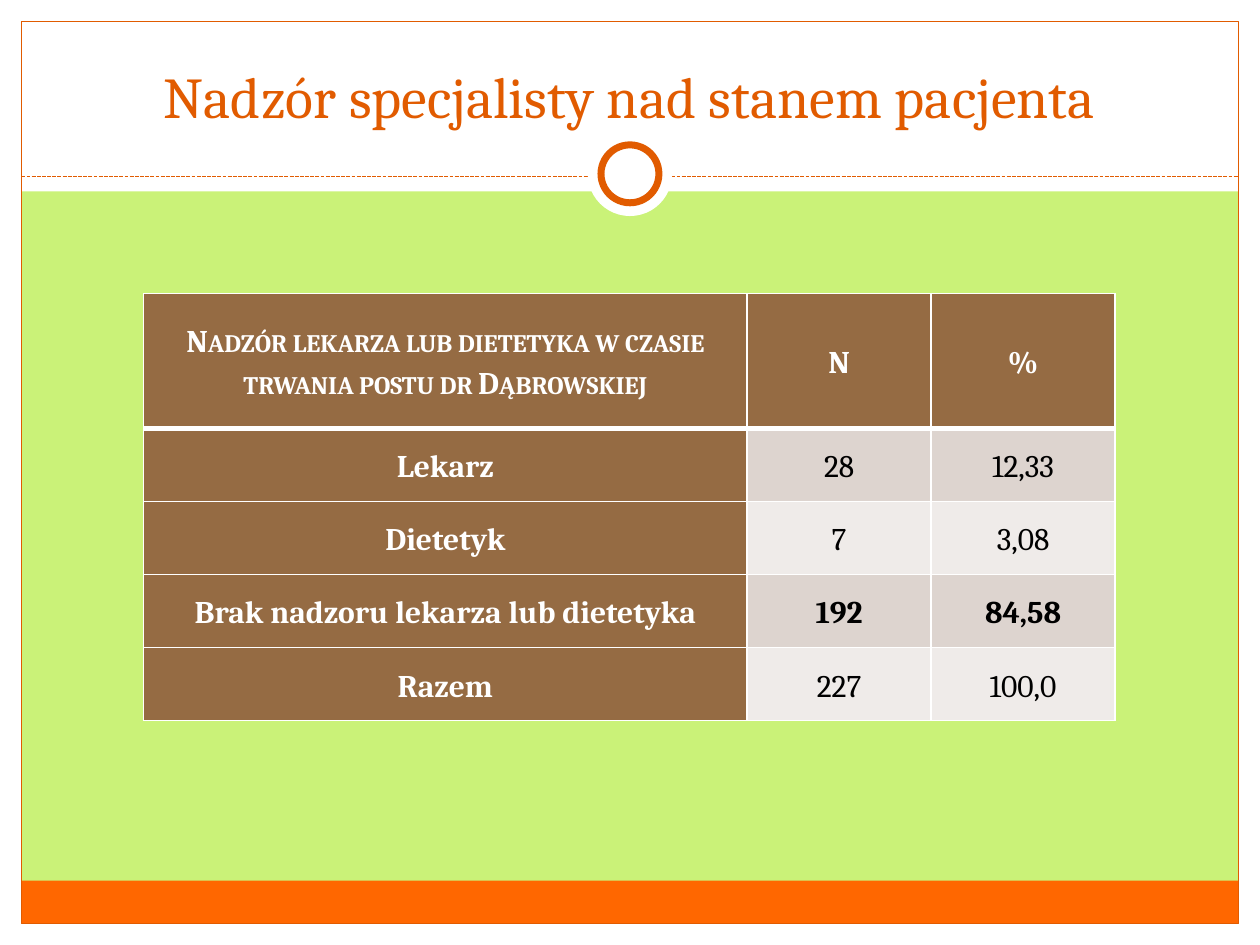
"""Build a slide with a table on specialist supervision of patients."""
from lxml import etree
from pptx import Presentation
from pptx.dml.color import RGBColor
from pptx.enum.dml import MSO_LINE
from pptx.enum.shapes import MSO_CONNECTOR, MSO_SHAPE
from pptx.enum.text import MSO_ANCHOR, PP_ALIGN
from pptx.oxml.ns import qn
from pptx.util import Inches, Pt

TITLE = "Nadzór specjalisty nad stanem pacjenta"
HEADER = ("Nadzór lekarza lub dietetyka w czasie trwania postu dr Dąbrowskiej", "N", "%")
ANSWERS = [
    ("Lekarz", "28", "12,33"),
    ("Dietetyk", "7", "3,08"),
    ("Brak nadzoru lekarza lub dietetyka", "192", "84,58"),
    ("Razem", "227", "100,0"),
]
BOLD_ROW = 3
FONT = "Cambria"

WHITE = RGBColor(0xFF, 0xFF, 0xFF)
BLACK = RGBColor(0, 0, 0)
GREEN = RGBColor(0xCA, 0xF2, 0x78)
ORANGE = RGBColor(0xFF, 0x67, 0x00)
RUST = RGBColor(0xE1, 0x5B, 0x00)
BROWN = RGBColor(0x95, 0x6B, 0x43)
BANDS = (RGBColor(0xEF, 0xEB, 0xE9), RGBColor(0xDD, 0xD4, 0xCF))

RECT, OVAL = MSO_SHAPE.RECTANGLE, MSO_SHAPE.OVAL
STRAIGHT, DASH = MSO_CONNECTOR.STRAIGHT, MSO_LINE.SQUARE_DOT
CENTER, MIDDLE, BOTTOM = PP_ALIGN.CENTER, MSO_ANCHOR.MIDDLE, MSO_ANCHOR.BOTTOM

WIDTH, HEIGHT = 10, 7.5
MARGIN = 0.17
INNER_W, INNER_H = WIDTH - 2 * MARGIN, HEIGHT - 2 * MARGIN
HEADER_H, FOOTER_H = 1.52, 0.34
RULE_Y, BADGE_Y = 1.4, 1.38
TABLE_LEFT, TABLE_TOP = 1.14, 2.33
COLUMNS = (4.79, 1.46, 1.46)
ROWS = (1.07,) + (0.58,) * len(ANSWERS)


def add_figure(slide, kind, box, fill=None, line=None, weight=0.75):
    figure = slide.shapes.add_shape(kind, *map(Inches, box))
    figure.shadow.inherit = False
    if fill is None:
        figure.fill.background()
    else:
        figure.fill.solid()
        figure.fill.fore_color.rgb = fill
    if line is None:
        figure.line.fill.background()
    else:
        figure.line.color.rgb = line
        figure.line.width = Pt(weight)


def centred_square(side):
    return (WIDTH - side) / 2, BADGE_Y - side / 2, side, side


def add_frame(slide):
    for box in (
        (0, HEIGHT - MARGIN, WIDTH, MARGIN),
        (0, 0, WIDTH, HEADER_H),
        (0, 0, MARGIN, HEIGHT),
        (WIDTH - MARGIN, 0, MARGIN, HEIGHT),
    ):
        add_figure(slide, RECT, box, WHITE)
    footer_top = HEIGHT - MARGIN - FOOTER_H
    add_figure(slide, RECT, (MARGIN, footer_top, INNER_W, FOOTER_H), ORANGE)
    add_figure(slide, RECT, (MARGIN, MARGIN, INNER_W, INNER_H), line=RUST)
    ends = (MARGIN, RULE_Y, WIDTH - MARGIN, RULE_Y)
    rule = slide.shapes.add_connector(STRAIGHT, *map(Inches, ends))
    rule.line.color.rgb = RUST
    rule.line.width = Pt(0.75)
    rule.line.dash_style = DASH
    etree.SubElement(rule._element.spPr, qn("a:effectLst"))
    add_figure(slide, OVAL, centred_square(0.67), WHITE)
    add_figure(slide, OVAL, centred_square(0.46), WHITE, RUST, 4)


def add_title(slide):
    title = slide.shapes.title
    title.left, title.top, title.width, title.height = map(Inches, (0.33, 0.25, 9.33, 0.83))
    title.text_frame.text = TITLE
    title.text_frame.vertical_anchor = BOTTOM
    style_paragraph(title.text_frame.paragraphs[0], 33, RUST)
    slide.shapes._spTree.append(title._element)


def style_paragraph(paragraph, size, color, bold=False):
    paragraph.alignment = CENTER
    font = paragraph.font
    font.name, font.size, font.bold = FONT, Pt(size), bold
    font.color.rgb = color


def add_borders(cell, bottom_weight, top_weight):
    weights = {"lnL": 1, "lnR": 1, "lnT": top_weight, "lnB": bottom_weight}
    for side, weight in weights.items():
        border = etree.SubElement(cell._tc.get_or_add_tcPr(), qn(f"a:{side}"), w=str(Pt(weight)))
        fill = etree.SubElement(border, qn("a:solidFill"))
        etree.SubElement(fill, qn("a:srgbClr"), val=str(WHITE))


def add_answers(slide):
    box = (TABLE_LEFT, TABLE_TOP, sum(COLUMNS), sum(ROWS))
    table = slide.shapes.add_table(len(ROWS), len(COLUMNS), *map(Inches, box)).table
    for column, width in zip(table.columns, COLUMNS):
        column.width = Inches(width)
    for row, height in zip(table.rows, ROWS):
        row.height = Inches(height)
    for r, values in enumerate([HEADER] + ANSWERS):
        for c, value in enumerate(values):
            cell = table.cell(r, c)
            heading = r == 0 or c == 0
            cell.text = value
            cell.vertical_anchor = MIDDLE
            cell.margin_left = cell.margin_right = Inches(0.07)
            cell.margin_top = cell.margin_bottom = 0
            add_borders(cell, 3 if r == 0 else 1, 3 if r == 1 else 1)
            cell.fill.solid()
            cell.fill.fore_color.rgb = BROWN if heading else BANDS[r % 2]
            paragraph = cell.text_frame.paragraphs[0]
            paragraph.line_spacing = 1.15
            style_paragraph(paragraph, 18, WHITE if heading else BLACK, heading or r == BOLD_ROW)
    question = table.cell(0, 0).text_frame.paragraphs[0].runs[0]
    question._r.get_or_add_rPr().set("cap", "small")


def main():
    deck = Presentation()
    deck.slide_width, deck.slide_height = Inches(WIDTH), Inches(HEIGHT)
    slide = deck.slides.add_slide(deck.slide_layouts[5])
    slide.background.fill.solid()
    slide.background.fill.fore_color.rgb = GREEN
    add_frame(slide)
    add_title(slide)
    add_answers(slide)
    deck.save("out.pptx")


if __name__ == "__main__":
    main()
